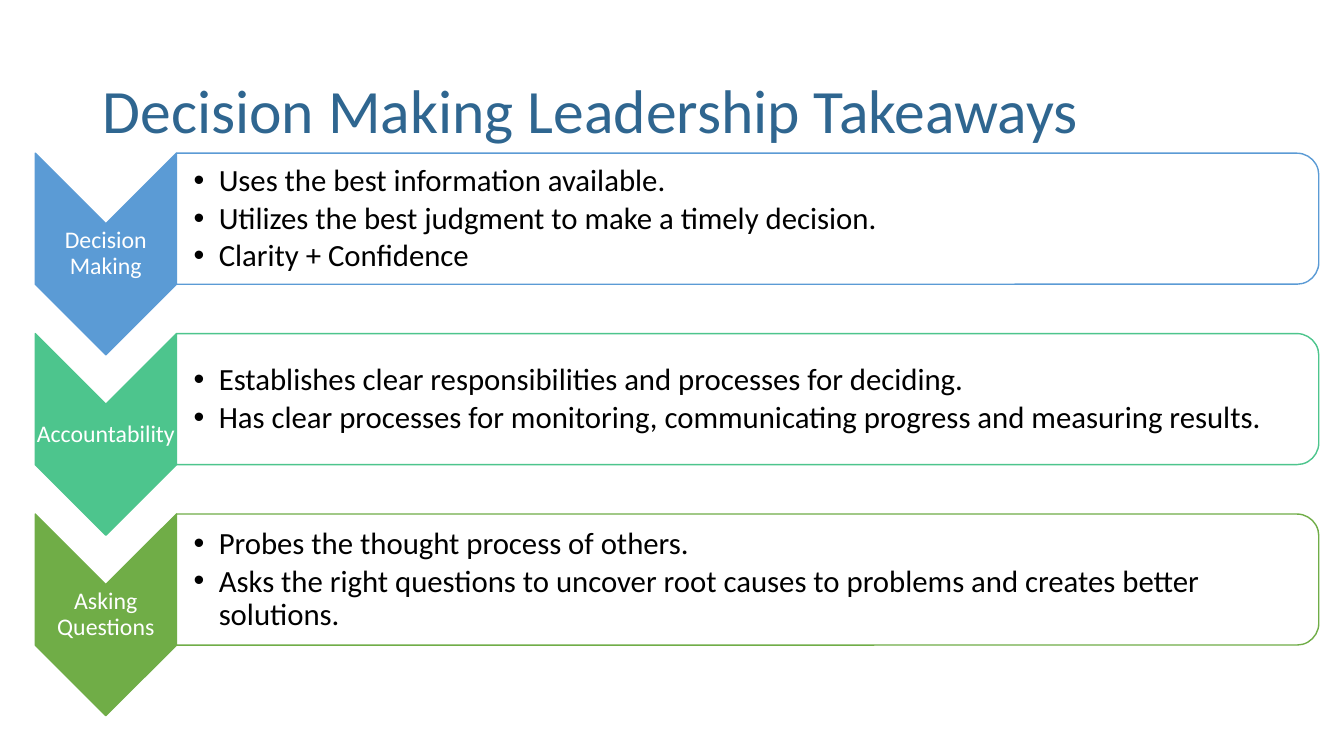
from lxml import etree
from pptx import Presentation
from pptx.dml.color import RGBColor
from pptx.enum.shapes import MSO_SHAPE
from pptx.enum.text import MSO_ANCHOR, PP_ALIGN
from pptx.oxml.ns import qn
from pptx.util import Pt

PX = 9144  # EMU per px, 100 px to the inch
FONT = "Calibri"
CHEVRON = MSO_SHAPE.CHEVRON
BAR = MSO_SHAPE.ROUND_2_SAME_RECTANGLE
MIDDLE = MSO_ANCHOR.MIDDLE
CENTER, LEFT = PP_ALIGN.CENTER, PP_ALIGN.LEFT

WHITE = RGBColor(0xFF, 0xFF, 0xFF)
BLACK = RGBColor(0x00, 0x00, 0x00)
NAVY = RGBColor(0x2F, 0x66, 0x90)
BLUE = RGBColor(0x5B, 0x9B, 0xD5)
TEAL = RGBColor(0x4D, 0xC5, 0x8D)
GREEN = RGBColor(0x70, 0xAD, 0x47)

FIRST_TOP, ROW_STEP = 152, 179
TAKEAWAYS = [
    ("Decision Making", BLUE, [
        "Uses the best information available.",
        "Utilizes the best judgment to make a timely decision.",
        "Clarity + Confidence"]),
    ("Accountability", TEAL, [
        "Establishes clear responsibilities and processes for deciding.",
        "Has clear processes for monitoring, communicating progress and measuring results."]),
    ("Asking Questions", GREEN, [
        "Probes the thought process of others.",
        "Asks the right questions to uncover root causes to problems and creates better solutions."]),
]

deck = Presentation()
deck.slide_width, deck.slide_height = 1333 * PX, 750 * PX
page = deck.slides.add_slide(deck.slide_layouts[6])


def add_turned(kind, left, top, width, height, fill, line):
    """Add a shape turned by 90 degrees that covers the given area."""
    shift = (width - height) * PX // 2
    shape = page.shapes.add_shape(
        kind, left * PX + shift, top * PX - shift, height * PX, width * PX)
    shape.rotation = 90
    shape.shadow.inherit = False
    shape.fill.solid()
    shape.fill.fore_color.rgb = fill
    shape.line.color.rgb = line
    shape.line.width = Pt(1)
    return shape


def add_text(lines, left, top, width, height, size, color,
             insets, align=LEFT, after=0, bullet=False):
    box = page.shapes.add_textbox(left * PX, top * PX, width * PX, height * PX)
    frame = box.text_frame
    frame.word_wrap = True
    frame.vertical_anchor = MIDDLE
    frame.margin_left, frame.margin_top, frame.margin_right, frame.margin_bottom = (
        inset * PX for inset in insets)
    frame.text = "\n".join(lines)
    for para in frame.paragraphs:
        para.alignment = align
        para.line_spacing = 0.9
        para.space_after = Pt(after)
        if bullet:
            props = para._p.get_or_add_pPr()
            props.set("marL", str(25 * PX))
            props.set("indent", str(-25 * PX))
            etree.SubElement(props, qn("a:buFont"), typeface="Arial")
            etree.SubElement(props, qn("a:buChar"), char="•")
        para.font.name = FONT
        para.font.size = Pt(size)
        para.font.color.rgb = color


# Title
add_text(["Decision Making Leadership Takeaways"], 92, 40, 1150, 145,
         44, NAVY, (10, 5, 10, 5))

# One chevron, label and bulleted bar per takeaway
for row, (label, color, points) in enumerate(TAKEAWAYS):
    top = FIRST_TOP + row * ROW_STEP
    add_turned(CHEVRON, 35, top, 140, 200, color, color)
    add_text([label], 35, top + 70, 140, 60, 17, WHITE, (1, 1, 1, 1),
             align=CENTER, after=6)
    add_turned(BAR, 175, top, 1133, 130, WHITE, color)
    add_text(points, 175, top + 7, 1127, 117, 22, BLACK, (17, 2, 2, 2),
             after=3, bullet=True)

deck.save("out.pptx")
